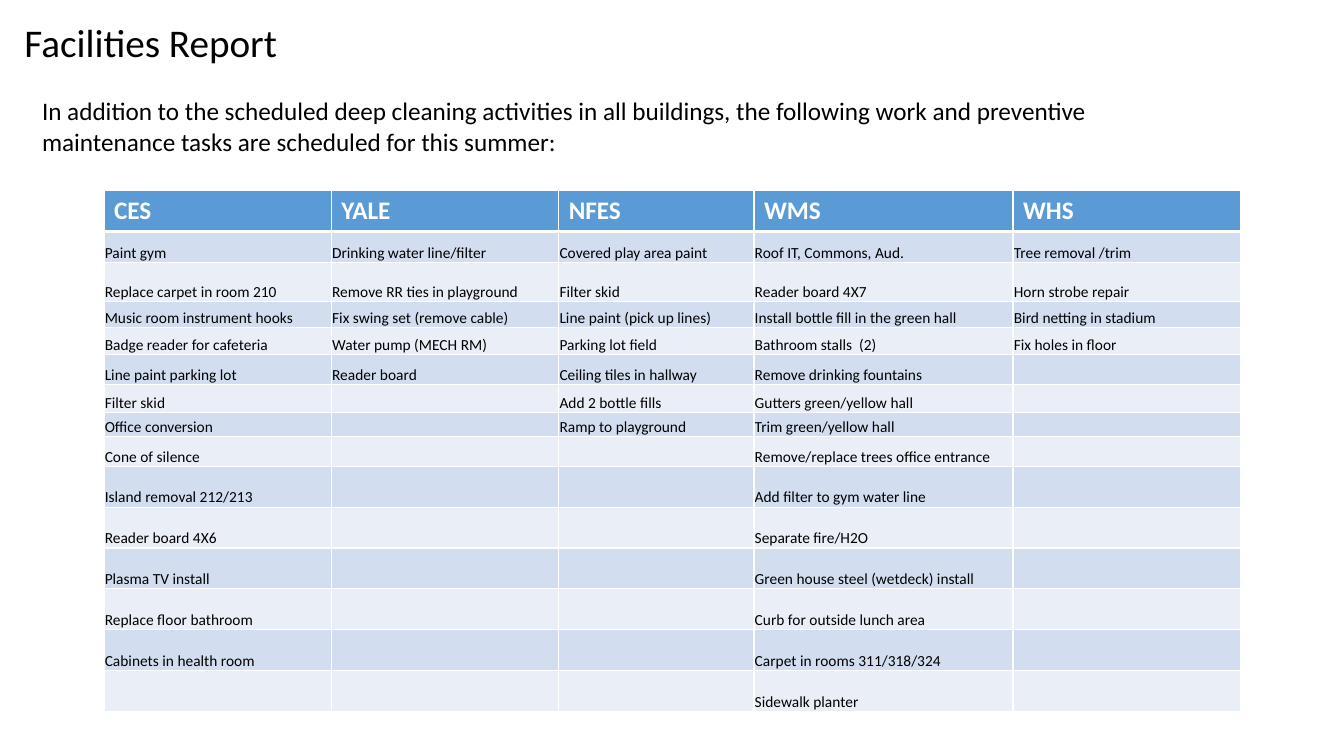
from dataclasses import dataclass
from itertools import zip_longest

from lxml.etree import SubElement
from pptx import Presentation
from pptx.dml.color import RGBColor
from pptx.enum.text import MSO_ANCHOR, MSO_AUTO_SIZE, PP_ALIGN
from pptx.oxml.ns import qn
from pptx.util import Cm, Pt


@dataclass(frozen=True)
class Theme:
    font: str = "Calibri"
    text: str = "000000"
    white: str = "FFFFFF"
    header: str = "5B9BD5"
    bands: tuple = ("D2DEEF", "EAEFF7")
    title_size: int = 28
    body_size: int = 18
    task_size: int = 11
    border: int = 1
    header_border: int = 3


TASKS = {
    "CES": [
        "Paint gym", "Replace carpet in room 210", "Music room instrument hooks",
        "Badge reader for cafeteria", "Line paint parking lot", "Filter skid",
        "Office conversion", "Cone of silence", "Island removal 212/213",
        "Reader board 4X6", "Plasma TV install", "Replace floor bathroom",
        "Cabinets in health room",
    ],
    "YALE": [
        "Drinking water line/filter", "Remove RR ties in playground",
        "Fix swing set (remove cable)", "Water pump (MECH RM)", "Reader board",
    ],
    "NFES": [
        "Covered play area paint", "Filter skid", "Line paint (pick up lines)",
        "Parking lot field", "Ceiling tiles in hallway", "Add 2 bottle fills",
        "Ramp to playground",
    ],
    "WMS": [
        "Roof IT, Commons, Aud.", "Reader board 4X7",
        "Install bottle fill in the green hall", "Bathroom stalls  (2)",
        "Remove drinking fountains", "Gutters green/yellow hall",
        "Trim green/yellow hall", "Remove/replace trees office entrance",
        "Add filter to gym water line", "Separate fire/H2O",
        "Green house steel (wetdeck) install", "Curb for outside lunch area",
        "Carpet in rooms 311/318/324", "Sidewalk planter",
    ],
    "WHS": [
        "Tree removal /trim", "Horn strobe repair", "Bird netting in stadium",
        "Fix holes in floor",
    ],
}
COLUMN_WIDTHS = [5.73, 5.73, 4.92, 6.53, 5.73]
ROW_HEIGHTS = [1.02, 0.78, 0.98, 0.66, 0.69, 0.75, 0.71, 0.61, 0.74] + [1.03] * 6


class ReportSlide:
    def __init__(self, presentation, theme):
        self.theme = theme
        self.slide = presentation.slides.add_slide(presentation.slide_layouts[5])

    def place(self, shape, left, top, width, height):
        shape.left, shape.top = Cm(left), Cm(top)
        shape.width, shape.height = Cm(width), Cm(height)

    def format_text(self, text_frame, size, color, bold=False):
        for paragraph in text_frame.paragraphs:
            for run in paragraph.runs:
                run.font.name = self.theme.font
                run.font.size = Pt(size)
                run.font.bold = bold
                run.font.color.rgb = RGBColor.from_string(color)

    def add_title(self, text, *box):
        title = self.slide.shapes.title
        self.place(title, *box)
        text_frame = title.text_frame
        text_frame.text = text
        text_frame.auto_size = MSO_AUTO_SIZE.NONE
        text_frame.vertical_anchor = MSO_ANCHOR.MIDDLE
        text_frame.paragraphs[0].alignment = PP_ALIGN.LEFT
        text_frame.paragraphs[0].line_spacing = 0.9
        self.format_text(text_frame, self.theme.title_size, self.theme.text)

    def add_text(self, text, *box):
        shape = self.slide.shapes.add_textbox(*map(Cm, box))
        text_frame = shape.text_frame
        text_frame.word_wrap = True
        text_frame.auto_size = MSO_AUTO_SIZE.SHAPE_TO_FIT_TEXT
        text_frame.text = text
        self.format_text(text_frame, self.theme.body_size, self.theme.text)

    def add_borders(self, cell, row_index):
        properties = cell._tc.get_or_add_tcPr()
        thick_side = {0: "lnB", 1: "lnT"}.get(row_index)
        for side in ("lnL", "lnR", "lnT", "lnB"):
            width = self.theme.header_border if side == thick_side else self.theme.border
            line = SubElement(properties, qn(f"a:{side}"), w=str(Pt(width)))
            fill = SubElement(line, qn("a:solidFill"))
            SubElement(fill, qn("a:srgbClr"), val=self.theme.white)

    def format_cell(self, cell, text, row_index):
        theme = self.theme
        self.add_borders(cell, row_index)
        cell.fill.solid()
        cell.text_frame.text = text
        if row_index == 0:
            cell.fill.fore_color.rgb = RGBColor.from_string(theme.header)
            self.format_text(cell.text_frame, theme.body_size, theme.white, bold=True)
            return
        band = theme.bands[(row_index - 1) % len(theme.bands)]
        cell.fill.fore_color.rgb = RGBColor.from_string(band)
        cell.vertical_anchor = MSO_ANCHOR.BOTTOM
        cell.margin_left = cell.margin_right = cell.margin_top = Cm(0.02)
        cell.margin_bottom = 0
        self.format_text(cell.text_frame, theme.task_size, theme.text)
        if not text:
            paragraph = cell.text_frame.paragraphs[0]
            SubElement(paragraph._p, qn("a:endParaRPr"), sz=str(theme.task_size * 100))

    def add_task_table(self, tasks, left, top, widths, heights):
        rows = [list(tasks), *zip_longest(*tasks.values(), fillvalue="")]
        frame = self.slide.shapes.add_table(
            len(rows), len(widths), Cm(left), Cm(top), Cm(sum(widths)), Cm(sum(heights))
        )
        table = frame.table
        for column, width in zip(table.columns, widths):
            column.width = Cm(width)
        for row_index, (row, height, texts) in enumerate(zip(table.rows, heights, rows)):
            row.height = Cm(height)
            for cell, text in zip(row.cells, texts):
                self.format_cell(cell, text, row_index)


def main():
    presentation = Presentation()
    presentation.slide_width = Cm(33.87)
    presentation.slide_height = Cm(19.05)
    report = ReportSlide(presentation, Theme())
    report.add_title("Facilities Report", 0.36, 0.36, 29.21, 1.52)
    report.add_task_table(TASKS, 2.62, 4.8, COLUMN_WIDTHS, ROW_HEIGHTS)
    report.add_text(
        "In addition to the scheduled deep cleaning activities in all buildings, the "
        "following work and preventive maintenance tasks are scheduled for this summer:",
        0.81, 2.29, 27.08, 1.8,
    )
    presentation.save("out.pptx")


if __name__ == "__main__":
    main()
